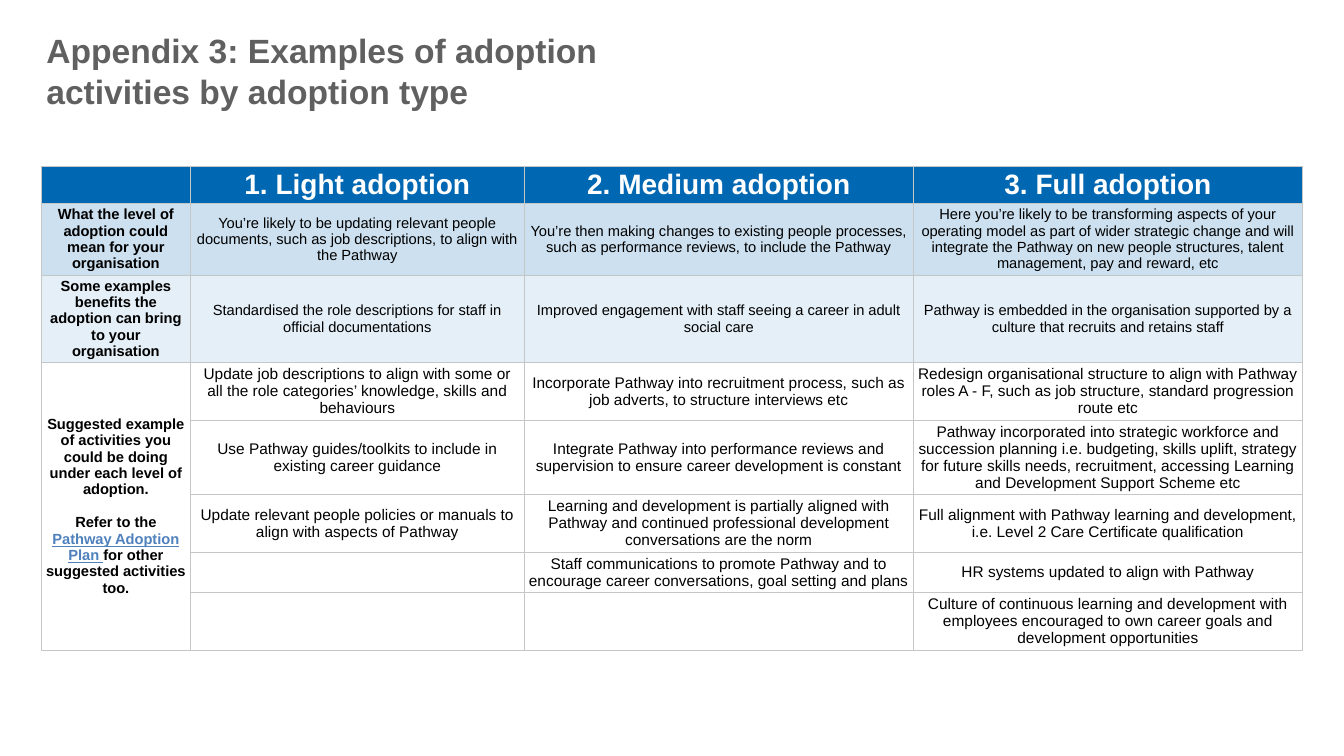
from lxml.etree import SubElement
from pptx import Presentation
from pptx.dml.color import RGBColor
from pptx.enum.text import MSO_ANCHOR, MSO_AUTO_SIZE, PP_ALIGN
from pptx.oxml import parse_xml
from pptx.oxml.ns import nsdecls, qn
from pptx.util import Pt

PX = 9144
FONT = "Arial"
COLORS = {
    "title": "606060",
    "blue": "0068B3",
    "white": "FFFFFF",
    "text": "000000",
    "link": "4F81BD",
    "border": "C4C7C5",
}
COLUMN_WIDTHS = [148, 331, 386, 386]
ROW_HEIGHTS = [37, 70, 70, 56, 73, 56, 40, 56]
ROW_TINTS = {0: 100, 1: 20, 2: 10}
ACTIVITY_ROW = 3
ROWS = [
    ["", "1. Light adoption", "2. Medium adoption", "3. Full adoption"],
    [
        "What the level of adoption could mean for your organisation",
        "You’re likely to be updating relevant people documents, such as job descriptions, "
        "to align with the Pathway",
        "You’re then making changes to existing people processes, such as performance reviews, "
        "to include the Pathway",
        "Here you’re likely to be transforming aspects of your operating model as part of wider "
        "strategic change and will integrate the Pathway on new people structures, talent "
        "management, pay and reward, etc",
    ],
    [
        "Some examples benefits the adoption can bring to your organisation",
        "Standardised the role descriptions for staff in official documentations",
        "Improved engagement with staff seeing a career in adult social care",
        "Pathway is embedded in the organisation supported by a culture that recruits and "
        "retains staff",
    ],
    [
        "",
        "Update job descriptions to align with some or all the role categories’ knowledge, "
        "skills and behaviours",
        "Incorporate Pathway into recruitment process, such as job adverts, to structure "
        "interviews etc",
        "Redesign organisational structure to align with Pathway roles A - F, such as job "
        "structure, standard progression route etc",
    ],
    [
        "",
        "Use Pathway guides/toolkits to include in existing career guidance",
        "Integrate Pathway into performance reviews and supervision to ensure career "
        "development is constant",
        "Pathway incorporated into strategic workforce and succession planning i.e. budgeting, "
        "skills uplift, strategy for future skills needs, recruitment, accessing Learning and "
        "Development Support Scheme etc",
    ],
    [
        "",
        "Update relevant people policies or manuals to align with aspects of Pathway",
        "Learning and development is partially aligned with Pathway and continued professional "
        "development conversations are the norm",
        "Full alignment with Pathway learning and development, i.e. Level 2 Care Certificate "
        "qualification",
    ],
    [
        "",
        "",
        "Staff communications to promote Pathway and to encourage career conversations, goal "
        "setting and plans",
        "HR systems updated to align with Pathway",
    ],
    [
        "",
        "",
        "",
        "Culture of continuous learning and development with employees encouraged to own career "
        "goals and development opportunities",
    ],
]


def add_run(paragraph, text, size, color, bold=False, underline=False):
    run = paragraph.add_run()
    run.text = text
    run.font.name = FONT
    run.font.size = Pt(size)
    run.font.bold = bold
    run.font.underline = underline
    run.font.color.rgb = RGBColor.from_string(COLORS[color])


def add_title(slide, lines):
    title = slide.shapes.title
    title.left, title.top, title.width, title.height = [n * PX for n in (46, 26, 1042, 88)]
    frame = title.text_frame
    frame.margin_left = frame.margin_right = frame.margin_top = frame.margin_bottom = 0
    frame.word_wrap = True
    frame.auto_size = MSO_AUTO_SIZE.NONE
    frame.vertical_anchor = MSO_ANCHOR.MIDDLE
    for index, line in enumerate(lines):
        paragraph = frame.add_paragraph() if index else frame.paragraphs[0]
        paragraph.alignment = PP_ALIGN.LEFT
        paragraph.space_before = Pt(0)
        add_run(paragraph, line, 24, "title", bold=True)


def style_cell(cell, tint):
    cell.margin_left = cell.margin_right = 4 * PX
    cell.margin_top = cell.margin_bottom = 3 * PX
    cell.vertical_anchor = MSO_ANCHOR.MIDDLE
    cell.text_frame.paragraphs[0].alignment = PP_ALIGN.CENTER
    properties = cell._tc.get_or_add_tcPr()
    if tint:
        cell.fill.solid()
        cell.fill.fore_color.rgb = RGBColor.from_string(COLORS["blue"])
        if tint < 100:
            color = properties.find(".//" + qn("a:srgbClr"))
            SubElement(color, qn("a:alpha"), val=str(tint * 1000))
    else:
        cell.fill.background()
    for index, side in enumerate(("lnL", "lnR", "lnT", "lnB")):
        properties.insert(index, parse_xml(
            f'<a:{side} {nsdecls("a")} w="{Pt(0.5)}"><a:solidFill>'
            f'<a:srgbClr val="{COLORS["border"]}"/></a:solidFill></a:{side}>'
        ))


def fill_activity_label(cell):
    frame = cell.text_frame
    add_run(
        frame.paragraphs[0],
        "Suggested example of activities you could be doing under each level of adoption.",
        10.5, "text", bold=True,
    )
    paragraph = frame.add_paragraph()
    paragraph.alignment = PP_ALIGN.CENTER
    paragraph.space_before = Pt(12)
    add_run(paragraph, "Refer to the ", 10.5, "text", bold=True)
    add_run(paragraph, "Pathway Adoption Plan ", 10.5, "link", bold=True, underline=True)
    add_run(paragraph, "for other suggested activities too.", 10.5, "text", bold=True)


def add_adoption_table(slide):
    table = slide.shapes.add_table(
        len(ROWS), len(COLUMN_WIDTHS), 41 * PX, 165 * PX,
        sum(COLUMN_WIDTHS) * PX, sum(ROW_HEIGHTS) * PX,
    ).table
    table.horz_banding = False
    for column, width in zip(table.columns, COLUMN_WIDTHS):
        column.width = width * PX
    for row, height in zip(table.rows, ROW_HEIGHTS):
        row.height = height * PX
    for row_index, texts in enumerate(ROWS):
        is_header = row_index == 0
        size = 20 if is_header else 10.5 if row_index < ACTIVITY_ROW else 11
        for column_index, text in enumerate(texts):
            cell = table.cell(row_index, column_index)
            style_cell(cell, ROW_TINTS.get(row_index))
            if text:
                add_run(
                    cell.text_frame.paragraphs[0], text, size,
                    "white" if is_header else "text",
                    bold=is_header or column_index == 0,
                )
    label = table.cell(ACTIVITY_ROW, 0)
    label.merge(table.cell(len(ROWS) - 1, 0))
    fill_activity_label(label)


def main():
    presentation = Presentation()
    presentation.slide_width = 1333 * PX
    presentation.slide_height = 750 * PX
    slide = presentation.slides.add_slide(presentation.slide_layouts[5])
    add_title(slide, ["Appendix 3: Examples of adoption", "activities by adoption type"])
    add_adoption_table(slide)
    presentation.save("out.pptx")


if __name__ == "__main__":
    main()
